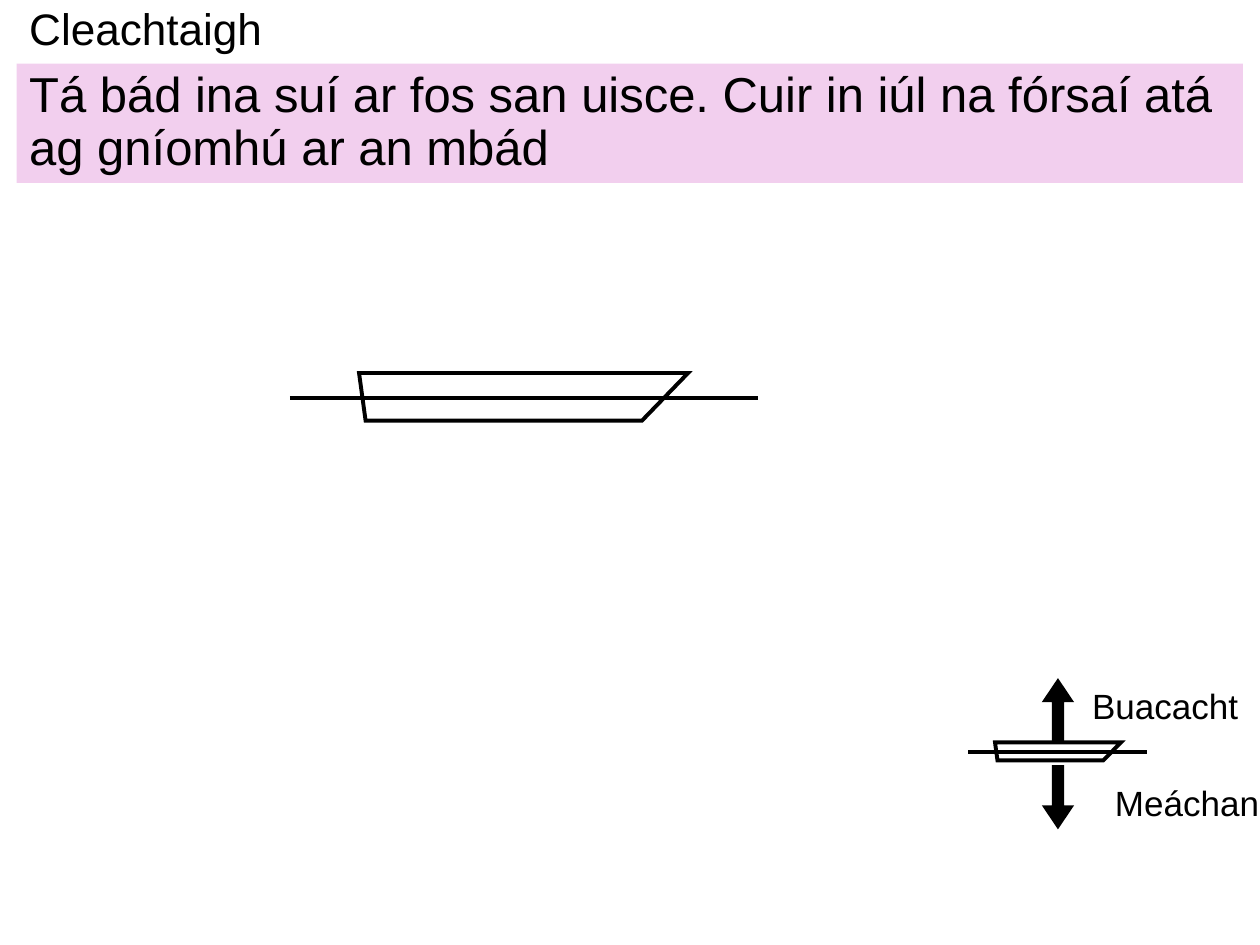
import dataclasses

import lxml.etree
import pptx
import pptx.dml.color
import pptx.enum.shapes
import pptx.enum.text
import pptx.oxml.ns
import pptx.util

Pt = pptx.util.Pt
qn = pptx.oxml.ns.qn


@dataclasses.dataclass(frozen=True)
class Theme:
    font: str = "Arial"
    ink: str = "000000"
    paper: str = "FFFFFF"
    panel: str = "F2CFEE"
    title_size: float = 25.2
    body_size: float = 28
    label_size: float = 20
    stroke: float = 2.25


THEME = Theme()

# Hull corners as fractions of its width and height
HULL = [(0, 0), (1, 0), (0.86, 1), (0.02, 1)]


def color(value):
    return pptx.dml.color.RGBColor.from_string(value)


def paint(shape, value):
    shape.fill.solid()
    shape.fill.fore_color.rgb = color(value)


def outline(shape):
    shape.line.color.rgb = color(THEME.ink)
    shape.line.width = Pt(THEME.stroke)


def write(box, text, size):
    """Put one left-aligned run in the box and return its paragraph."""
    para = box.text_frame.paragraphs[0]
    para.alignment = pptx.enum.text.PP_ALIGN.LEFT
    span = para.add_run()
    span.text = text
    span.font.name = THEME.font
    span.font.size = Pt(size)
    span.font.color.rgb = color(THEME.ink)
    return para


def fill_placeholder(box, place, text, size, anchor):
    box.left, box.top, box.width, box.height = map(Pt, place)
    frame = box.text_frame
    frame.word_wrap = True
    frame.auto_size = pptx.enum.text.MSO_AUTO_SIZE.NONE
    frame.vertical_anchor = anchor
    para = write(box, text, size)
    para.line_spacing = 0.9
    return para


def remove_bullet(para):
    properties = para._p.get_or_add_pPr()
    properties.set("marL", "0")
    properties.set("indent", "0")
    lxml.etree.SubElement(properties, qn("a:buNone"))


def add_label(page, left, top, width, text):
    box = page.shapes.add_textbox(Pt(left), Pt(top), Pt(width), Pt(31.5))
    box.text_frame.word_wrap = False
    para = write(box, text, THEME.label_size)
    para.space_after = Pt(12)


def add_boat(page, left, top, width, height):
    corners = [(Pt(left + x * width), Pt(top + y * height)) for x, y in HULL]
    builder = page.shapes.build_freeform(*corners[0])
    builder.add_line_segments(corners[1:], close=True)
    hull = builder.convert_to_shape()
    hull.shadow.inherit = False
    paint(hull, THEME.paper)
    outline(hull)
    miter = lxml.etree.SubElement(hull.line._get_or_add_ln(), qn("a:miter"))
    miter.set("lim", "800000")


def add_waterline(page, start, end, level):
    line = page.shapes.add_connector(
        pptx.enum.shapes.MSO_CONNECTOR.STRAIGHT,
        Pt(start), Pt(level), Pt(end), Pt(level))
    outline(line)
    lxml.etree.SubElement(line._element.spPr, qn("a:effectLst"))


def add_force(page, top, rotation):
    arrow = page.shapes.add_shape(
        pptx.enum.shapes.MSO_SHAPE.DOWN_ARROW,
        Pt(595.3), Pt(top), Pt(18.5), Pt(36.7))
    arrow.rotation = rotation
    arrow.adjustments[0] = 0.383
    arrow.adjustments[1] = 0.742
    arrow.shadow.inherit = False
    paint(arrow, THEME.ink)
    arrow.line.fill.background()


def main():
    deck = pptx.Presentation()
    deck.slide_width, deck.slide_height = Pt(720), Pt(540)
    page = deck.slides.add_slide(deck.slide_layouts[1])
    for box in list(page.placeholders)[2:]:
        box._element.getparent().remove(box._element)

    # Heading and task
    anchors = pptx.enum.text.MSO_ANCHOR
    fill_placeholder(page.shapes.title, (9.5, 0, 520.5, 36),
                     "Cleachtaigh", THEME.title_size, anchors.MIDDLE)
    task = page.placeholders[1]
    paint(task, THEME.panel)
    para = fill_placeholder(
        task, (9.5, 36.3, 700.7, 68.2),
        "Tá bád ina suí ar fos san uisce. Cuir in iúl na fórsaí atá "
        "ag gníomhú ar an mbád", THEME.body_size, anchors.TOP)
    para.space_before = Pt(10)
    remove_bullet(para)

    # Large boat for the exercise
    add_boat(page, 205.2, 213.2, 188, 27.2)
    add_waterline(page, 165.6, 433, 227.4)

    # Small boat with the answer
    add_boat(page, 568.6, 424.2, 72, 10.3)
    add_waterline(page, 553.4, 655.6, 429.7)
    add_label(page, 617, 387.5, 98.6, "Buacacht")
    add_label(page, 630, 443, 98, "Meáchan")
    add_force(page, 387.5, rotation=180)
    add_force(page, 437.2, rotation=0)

    deck.save("out.pptx")


if __name__ == "__main__":
    main()
